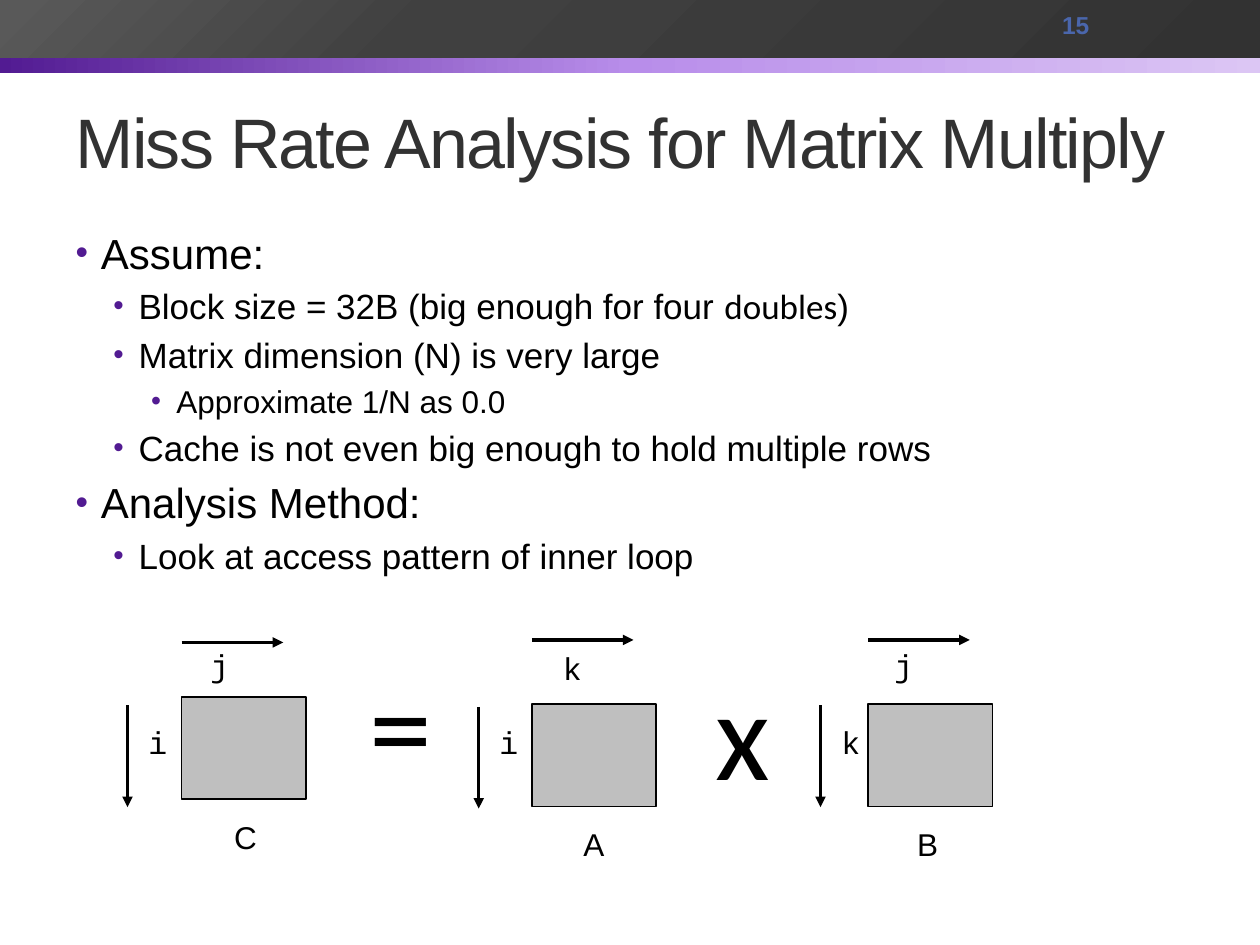
from lxml.etree import SubElement
from pptx import Presentation
from pptx.dml.color import RGBColor
from pptx.enum.shapes import MSO_CONNECTOR, MSO_SHAPE
from pptx.enum.text import MSO_ANCHOR, MSO_AUTO_SIZE, PP_ALIGN
from pptx.oxml import parse_xml
from pptx.oxml.ns import nsdecls, qn
from pptx.util import Cm, Pt

BLACK = RGBColor(0x00, 0x00, 0x00)
WHITE = RGBColor(0xFF, 0xFF, 0xFF)
GRAY = RGBColor(0xBF, 0xBF, 0xBF)
DARK = RGBColor(0x32, 0x32, 0x32)
MID = RGBColor(0x40, 0x40, 0x40)
LIGHT = RGBColor(0x59, 0x59, 0x59)
PURPLE = RGBColor(0x52, 0x1B, 0x92)
LILAC = RGBColor(0xB8, 0x8D, 0xEA)
PALE = RGBColor(0xDC, 0xC6, 0xF4)
BLUE = RGBColor(0x4A, 0x66, 0xAC)

deck = Presentation()
deck.slide_width, deck.slide_height = Cm(25.4), Cm(19.05)
slide = deck.slides.add_slide(deck.slide_layouts[1])
shapes = slide.shapes
title, body = shapes.title, slide.placeholders[1]


def label(text, x, y, w, h, face, size, wrap=False):
    box = shapes.add_textbox(Cm(x), Cm(y), Cm(w), Cm(h))
    box.text_frame.word_wrap = wrap
    para = box.text_frame.paragraphs[0]
    para.text = text
    para.font.name, para.font.size = face, Pt(size)
    para.font.color.rgb = BLACK
    return box


def arrow(x, y, dx, dy):
    line = shapes.add_connector(
        MSO_CONNECTOR.STRAIGHT, Cm(x), Cm(y), Cm(x + dx), Cm(y + dy))
    line.line.color.rgb = BLACK
    line.line.width = Pt(2)
    SubElement(line.line._get_or_add_ln(), qn("a:tailEnd"), type="triangle")
    SubElement(line._element.spPr, qn("a:effectLst"))


bands = [
    (0.61, 0.86, 0, [(0, PURPLE), (50, LILAC), (100, PALE)]),
    (0, 1.17, 225, [(0, DARK), (66, MID), (99, LIGHT)]),
]
for y, h, angle, stops in bands:
    band = shapes.add_shape(MSO_SHAPE.RECTANGLE, 0, Cm(y), Cm(25.4), Cm(h))
    band.shadow.inherit = False
    band.line.fill.background()
    marks = "".join(
        f'<a:gs pos="{pos * 1000}"><a:srgbClr val="{color}"/></a:gs>'
        for pos, color in stops)
    band._element.spPr.find(qn("a:prstGeom")).addnext(parse_xml(
        f'<a:gradFill {nsdecls("a")} rotWithShape="1"><a:gsLst>{marks}</a:gsLst>'
        f'<a:lin ang="{angle * 60000}" scaled="0"/></a:gradFill>'))

title.left, title.top, title.width, title.height = (
    Cm(1.27), Cm(1.47), Cm(22.86), Cm(2.74))
title.text_frame.auto_size = MSO_AUTO_SIZE.NONE
title.text_frame.vertical_anchor = MSO_ANCHOR.MIDDLE
head = title.text_frame.paragraphs[0]
head.text = "Miss Rate Analysis for Matrix Multiply"
head.alignment = PP_ALIGN.LEFT
head.font.name, head.font.size = "Arial", Pt(40)
head.font.color.rgb = DARK
head.font._element.set("spc", "-100")

body.left, body.top, body.width, body.height = (
    Cm(1.27), Cm(4.45), Cm(22.86), Cm(13.54))
body.text_frame.auto_size = MSO_AUTO_SIZE.NONE
points = [
    (0, ["Assume:"]),
    (1, ["Block size = 32B (big enough for four ", "doubles", ")"]),
    (1, ["Matrix dimension (N) is very large"]),
    (2, ["Approximate 1/N as 0.0"]),
    (1, ["Cache is not even big enough to hold multiple rows"]),
    (0, ["Analysis Method:"]),
    (1, ["Look at access pattern of inner loop"]),
]
for i, (level, parts) in enumerate(points):
    frame = body.text_frame
    para = frame.add_paragraph() if i else frame.paragraphs[0]
    para.level = level
    props = para._p.get_or_add_pPr()
    props.set("marL", str(Cm(0.51 + 0.76 * level)))
    props.set("indent", str(Cm(-0.51)))
    tint = SubElement(props, qn("a:buClr"))
    SubElement(tint, qn("a:srgbClr"), val=str(PURPLE))
    SubElement(props, qn("a:buSzPct"), val="90000" if level == 2 else "85000")
    SubElement(props, qn("a:buFont"), typeface="Arial")
    SubElement(props, qn("a:buChar"), char="•")
    para.font.name, para.font.size = "Arial", Pt([24, 20, 18][level])
    para.font.color.rgb = BLACK
    for part in parts:
        run = para.add_run()
        run.text = part
        if part == "doubles":
            run.font.name = "Calibri"

grids = [
    ("C", "i", "j", 3.66, 14.05, 2.57, 14.22, 3.99, 12.9, 12.95, 4.47),
    ("A", "i", "k", 10.72, 14.2, 9.65, 14.25, 11.1, 12.95, 12.9, 11.51),
    ("B", "k", "j", 17.5, 14.2, 16.54, 14.22, 17.78, 12.9, 12.9, 18.24),
]
for name, row, col, x, y, downx, downy, colx, coly, topy, namex in grids:
    label(name, namex, y + 2.31, 1.1, 1.27, "Arial", 18)
    for text, left, top in [(row, downx + 0.17, 14.45), (col, colx, coly)]:
        tag = label(text, left, top, 0.89, 1.02, "Courier New", 18)
        tag.fill.solid()
        tag.fill.fore_color.rgb = WHITE
    grid = shapes.add_shape(
        MSO_SHAPE.RECTANGLE, Cm(x), Cm(y), Cm(2.51), Cm(2.06))
    grid.shadow.inherit = False
    grid.fill.solid()
    grid.fill.fore_color.rgb = GRAY
    grid.line.color.rgb = BLACK
    grid.line.width = Pt(1)
    arrow(x, topy, 2.05, 0)
    arrow(downx, downy, 0, 2.05)

for sign, x, y in [("=", 7.19, 12.9), ("x", 14.17, 13.06)]:
    label(sign, x, y, 1.47, 6.4, "Calibri", 72, True)

page = label("15", 21.16, 0.05, 2.97, 0.91, "Arial", 14, True)
page.text_frame.vertical_anchor = MSO_ANCHOR.MIDDLE
font = page.text_frame.paragraphs[0].font
font.bold = True
font.color.rgb = BLUE

deck.save("out.pptx")
